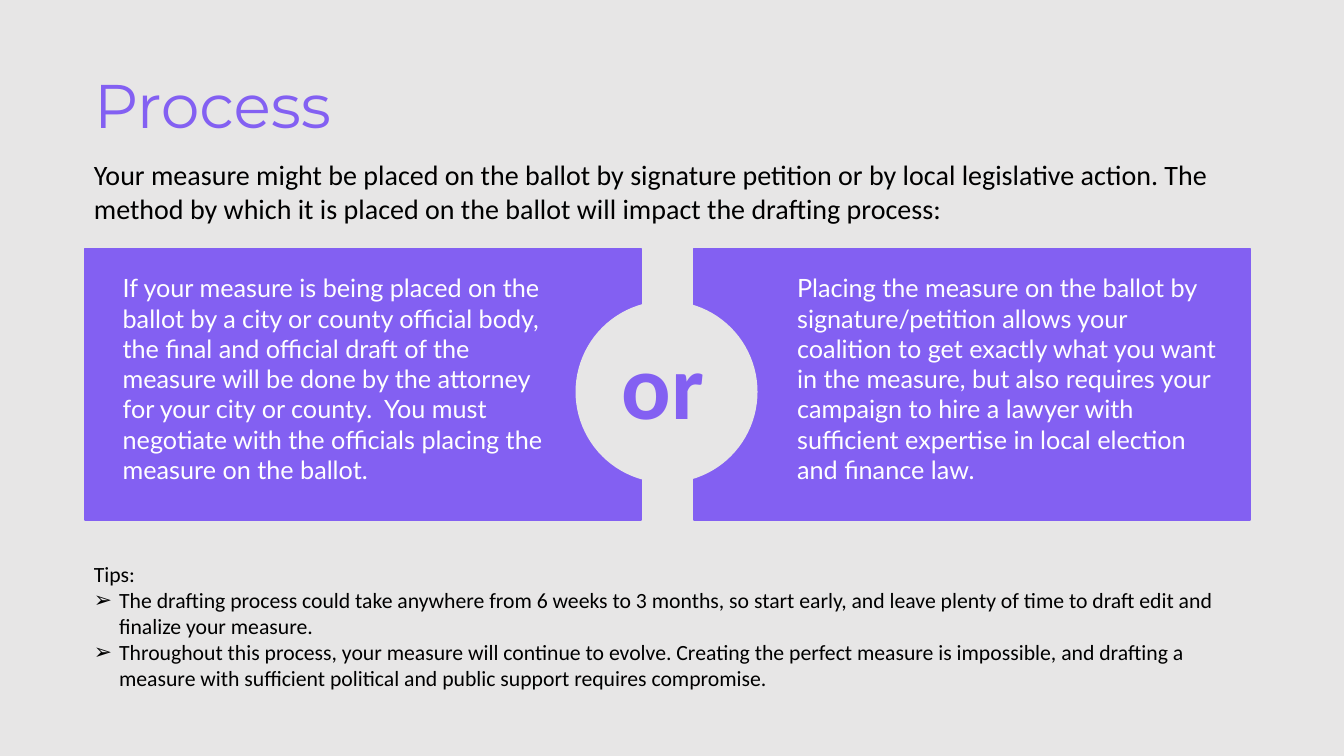
from dataclasses import dataclass

from lxml.etree import SubElement
from pptx import Presentation
from pptx.dml.color import RGBColor as RGB
from pptx.enum.shapes import MSO_SHAPE as SHAPE
from pptx.enum.text import MSO_ANCHOR as ANCHOR, MSO_AUTO_SIZE as FIT, PP_ALIGN as ALIGN
from pptx.oxml.ns import qn
from pptx.util import Inches, Pt


@dataclass(frozen=True)
class Theme:
    paper: RGB = RGB.from_string("E7E6E6")
    accent: RGB = RGB.from_string("8360F2")
    ink: RGB = RGB.from_string("000000")
    white: RGB = RGB.from_string("FFFFFF")
    title: float = 44
    lead: float = 20
    card: float = 18
    tips: float = 15.5
    joiner: float = 66


def add_bullet(p, char, indent):
    pPr = p._p.get_or_add_pPr()
    pPr.set("marL", str(Inches(indent)))
    pPr.set("indent", str(-Inches(indent)))
    SubElement(pPr, qn("a:buFont"), typeface="Arial")
    SubElement(pPr, qn("a:buChar"), char=char)


def write(p, text, size, color, font="Calibri", bold=False, bullet=None, spacing=None):
    p.alignment = ALIGN.LEFT
    if spacing:
        p.line_spacing = spacing
    if bullet:
        add_bullet(p, bullet, 0.25)
    r = p.add_run()
    r.text = text
    r.font.name = font
    r.font.size = Pt(size)
    r.font.bold = bold
    r.font.color.rgb = color


class Deck:
    COLS, ROWS = 16, 9

    def __init__(self, theme):
        self.theme = theme
        self.prs = Presentation()
        self.prs.slide_width = Inches(13.33)
        self.prs.slide_height = Inches(7.5)
        self.s = self.prs.slides.add_slide(self.prs.slide_layouts[5])
        self.s.background.fill.solid()
        self.s.background.fill.fore_color.rgb = theme.paper

    def box(self, col, row, cols, rows):
        dx = self.prs.slide_width / self.COLS
        dy = self.prs.slide_height / self.ROWS
        return [round(v) for v in (col * dx, row * dy, cols * dx, rows * dy)]

    def title(self, text, *area):
        sp = self.s.shapes.title
        sp.left, sp.top, sp.width, sp.height = self.box(*area)
        tf = sp.text_frame
        tf.vertical_anchor = ANCHOR.MIDDLE
        write(tf.paragraphs[0], text, self.theme.title, self.theme.accent,
              font="Montserrat", spacing=0.9)

    def text(self, lines, *area, size, color, bold=False, fit=FIT.NONE):
        tf = self.s.shapes.add_textbox(*self.box(*area)).text_frame
        tf.word_wrap = True
        tf.auto_size = fit
        for i, (line, bullet) in enumerate(lines):
            p = tf.add_paragraph() if i else tf.paragraphs[0]
            write(p, line, size, color, bold=bold, bullet=bullet)

    def shape(self, kind, color, *area):
        sp = self.s.shapes.add_shape(kind, *self.box(*area))
        sp.shadow.inherit = False
        sp.fill.solid()
        sp.fill.fore_color.rgb = color
        sp.line.color.rgb = color
        sp.line.width = Pt(1)

    def table(self, text, *area):
        tbl = self.s.shapes.add_table(1, 1, *self.box(*area)).table
        tbl.first_row = tbl.horz_banding = False
        cell = tbl.cell(0, 0)
        tcPr = cell._tc.get_or_add_tcPr()
        for side in ("lnL", "lnR", "lnT", "lnB"):
            SubElement(SubElement(tcPr, qn(f"a:{side}"), w="0"), qn("a:noFill"))
        cell.fill.background()
        write(cell.text_frame.paragraphs[0], text, self.theme.card,
              self.theme.white, font="Lato")


LEAD = ("Your measure might be placed on the ballot by signature petition or by local "
        "legislative action. The method by which it is placed on the ballot will impact "
        "the drafting process:")
OFFICIAL = ("If your measure is being placed on the ballot by a city or county official "
            "body, the final and official draft of the measure will be done by the "
            "attorney for your city or county.  You must negotiate with the officials "
            "placing the measure on the ballot.")
PETITION = ("Placing the measure on the ballot by signature/petition allows your coalition "
            "to get exactly what you want in the measure, but also requires your campaign "
            "to hire a lawyer with sufficient expertise in local election and finance law.")
TIPS = [
    ("Tips:", None),
    ("The drafting process could take anywhere from 6 weeks to 3 months, so start early, "
     "and leave plenty of time to draft edit and finalize your measure.", "➢"),
    ("Throughout this process, your measure will continue to evolve. Creating the perfect "
     "measure is impossible, and drafting a measure with sufficient political and public "
     "support requires compromise.", "➢"),
]


def main():
    theme = Theme()
    deck = Deck(theme)
    deck.title("Process", 1, 0.67, 10.52, 1.25)
    deck.text([(LEAD, None)], 1, 1.82, 13.87, 1.54, size=theme.lead, color=theme.ink)
    for i in range(2):
        deck.shape(SHAPE.RECTANGLE, theme.accent, 1.01 + 7.25 * i, 2.96, 6.62, 3.23)
    deck.shape(SHAPE.OVAL, theme.paper, 6.86, 3.59, 2.15, 2.15)
    deck.text([("or", None)], 7.28, 3.84, 1.39, 1.45, size=theme.joiner,
              color=theme.accent, bold=True, fit=FIT.SHAPE_TO_FIT_TEXT)
    deck.table(OFFICIAL, 1.34, 3.19, 5.24, 2.68)
    deck.table(PETITION, 9.37, 3.19, 5.28, 2.39)
    deck.text(TIPS, 1, 6.62, 13.87, 1.81, size=theme.tips, color=theme.ink)
    deck.prs.save("out.pptx")


if __name__ == "__main__":
    main()
